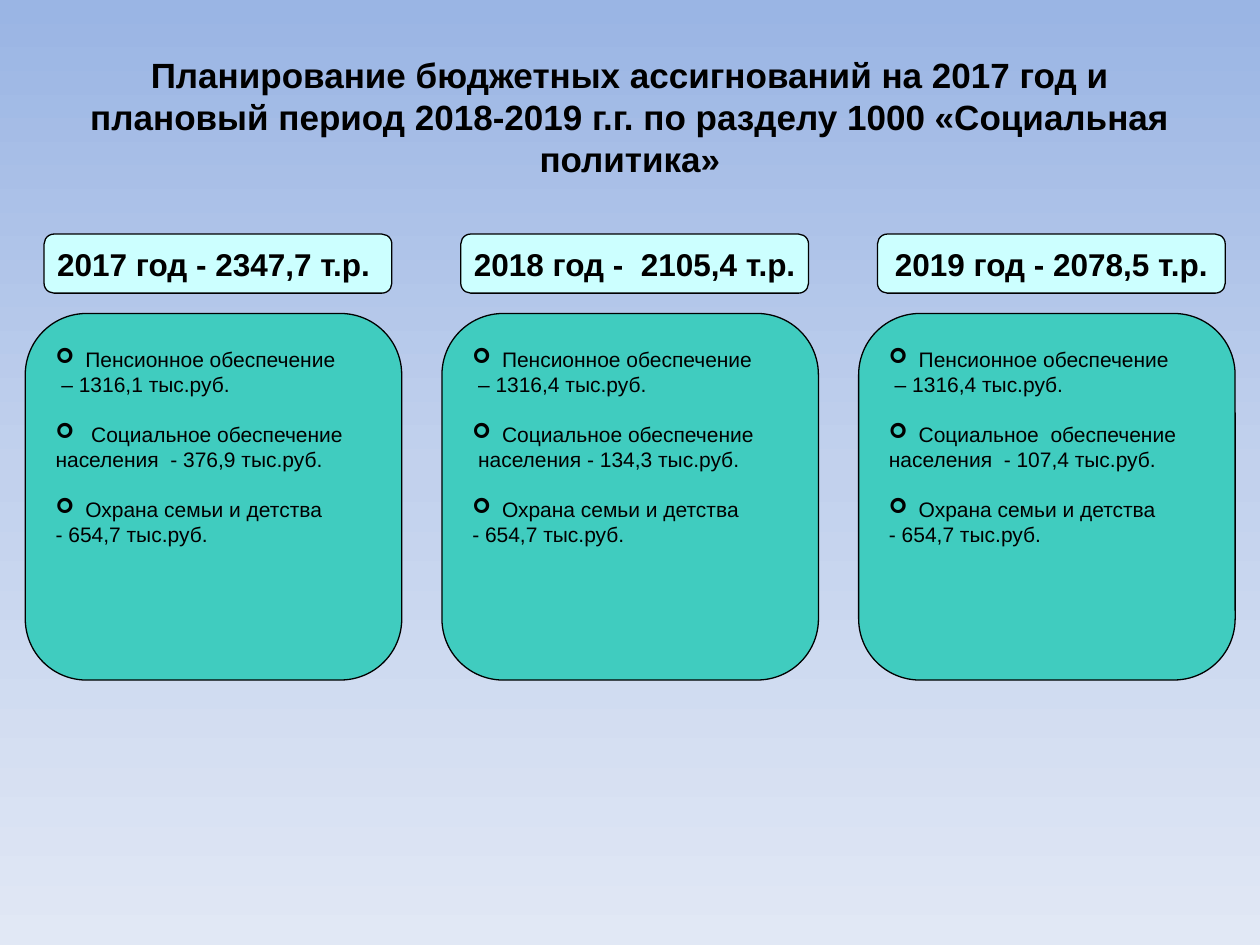
from copy import deepcopy
from dataclasses import dataclass

from lxml import etree
from pptx import Presentation
from pptx import util as u
from pptx.dml.color import RGBColor
from pptx.enum import shapes, text
from pptx.oxml.ns import qn

INK, HEAD_FILL, CARD_FILL = "000000", "CCFFFF", "40CCBF"
GRADIENT = [(0, "9AB5E4"), (0.5, "C2D1ED"), (1, "E1E8F5")]
TITLE = {"name": "Arial", "size": u.Pt(20), "bold": True}
HEAD = {"name": "Arial", "size": u.Pt(18), "bold": True}
BODY = {"name": "Arial", "size": u.Pt(12), "bold": False}
PITCH = 8.4


@dataclass
class Box:
    left: float
    top: float
    width: float
    height: float

    def cm(self, shift: float = 0) -> list:
        return [u.Cm(v) for v in (self.left + shift, self.top, self.width, self.height)]


@dataclass
class Year:
    total: str
    items: list[tuple[str, str]]


TITLE_BOX = Box(1.27, 0.76, 22.86, 3.18)
HEAD_BOX = Box(0.89, 4.72, 7.01, 1.19)
CARD_BOX = Box(0.51, 6.32, 7.59, 7.39)

PENSION = "Пенсионное обеспечение"
FAMILY = ("Охрана семьи и детства", "- 654,7 тыс.руб.")
YEARS = [
    Year("2017 год - 2347,7 т.р. ", [
        (PENSION, " – 1316,1 тыс.руб."),
        (" Социальное обеспечение", "населения  - 376,9 тыс.руб."),
        FAMILY]),
    Year("2018 год -  2105,4 т.р.", [
        (PENSION, " – 1316,4 тыс.руб."),
        ("Социальное обеспечение", " населения - 134,3 тыс.руб."),
        FAMILY]),
    Year("2019 год - 2078,5 т.р.", [
        (PENSION, " – 1316,4 тыс.руб."),
        ("Социальное  обеспечение", "населения  - 107,4 тыс.руб."),
        FAMILY]),
]


def paint(color, value: str) -> None:
    color.rgb = RGBColor.from_string(value)


def write(p, words: str, fmt: dict, align) -> None:
    p.alignment = align
    r = p.add_run()
    r.text = words
    for key, value in fmt.items():
        setattr(r.font, key, value)
    paint(r.font.color, INK)


def add_bullet(p) -> None:
    pPr = p._p.get_or_add_pPr()
    pPr.set("marL", str(u.Cm(0.6)))
    pPr.set("indent", str(-u.Cm(0.6)))
    etree.SubElement(pPr, qn("a:buFont")).set("typeface", "Wingdings")
    etree.SubElement(pPr, qn("a:buChar")).set("char", "➢")


def add_panel(slide, box: Box, shift: float, fill: str):
    sp = slide.shapes.add_shape(shapes.MSO_SHAPE.ROUNDED_RECTANGLE, *box.cm(shift))
    sp.adjustments[0] = 0.167
    sp.shadow.inherit = False
    sp.fill.solid()
    paint(sp.fill.fore_color, fill)
    paint(sp.line.color, INK)
    sp.line.width = u.Pt(0.75)
    return sp.text_frame


def add_title(slide, words: str) -> None:
    tf = slide.shapes.add_textbox(*TITLE_BOX.cm()).text_frame
    tf.word_wrap = True
    tf.vertical_anchor = text.MSO_ANCHOR.MIDDLE
    write(tf.paragraphs[0], words, TITLE, text.PP_ALIGN.CENTER)


def add_year(slide, year: Year, shift: float) -> None:
    tf = add_panel(slide, HEAD_BOX, shift, HEAD_FILL)
    tf.word_wrap = False
    tf.vertical_anchor = text.MSO_ANCHOR.MIDDLE
    write(tf.paragraphs[0], year.total, HEAD, text.PP_ALIGN.CENTER)

    tf = add_panel(slide, CARD_BOX, shift, CARD_FILL)
    tf.word_wrap = True
    tf.vertical_anchor = text.MSO_ANCHOR.TOP
    tf.margin_top = u.Cm(0.3)
    for i, (name, amount) in enumerate(year.items):
        p = tf.add_paragraph() if i else tf.paragraphs[0]
        p.space_before = u.Pt(14 if i else 0)
        write(p, name, BODY, text.PP_ALIGN.LEFT)
        add_bullet(p)
        write(tf.add_paragraph(), amount, BODY, text.PP_ALIGN.LEFT)


def set_background(slide) -> None:
    fill = slide.background.fill
    fill.gradient()
    fill.gradient_angle = 270
    last = fill.gradient_stops[1]._gs
    last.addprevious(deepcopy(last))
    for stop, (position, color) in zip(fill.gradient_stops, GRADIENT):
        stop.position = position
        paint(stop.color, color)


def main() -> None:
    prs = Presentation()
    prs.slide_width, prs.slide_height = u.Cm(25.4), u.Cm(19.05)
    slide = prs.slides.add_slide(prs.slide_layouts[6])
    set_background(slide)
    add_title(slide, "Планирование бюджетных ассигнований на 2017 год и плановый "
                     "период 2018-2019 г.г. по разделу 1000 «Социальная политика»")
    for i, year in enumerate(YEARS):
        add_year(slide, year, i * PITCH)
    prs.save("out.pptx")


if __name__ == "__main__":
    main()
